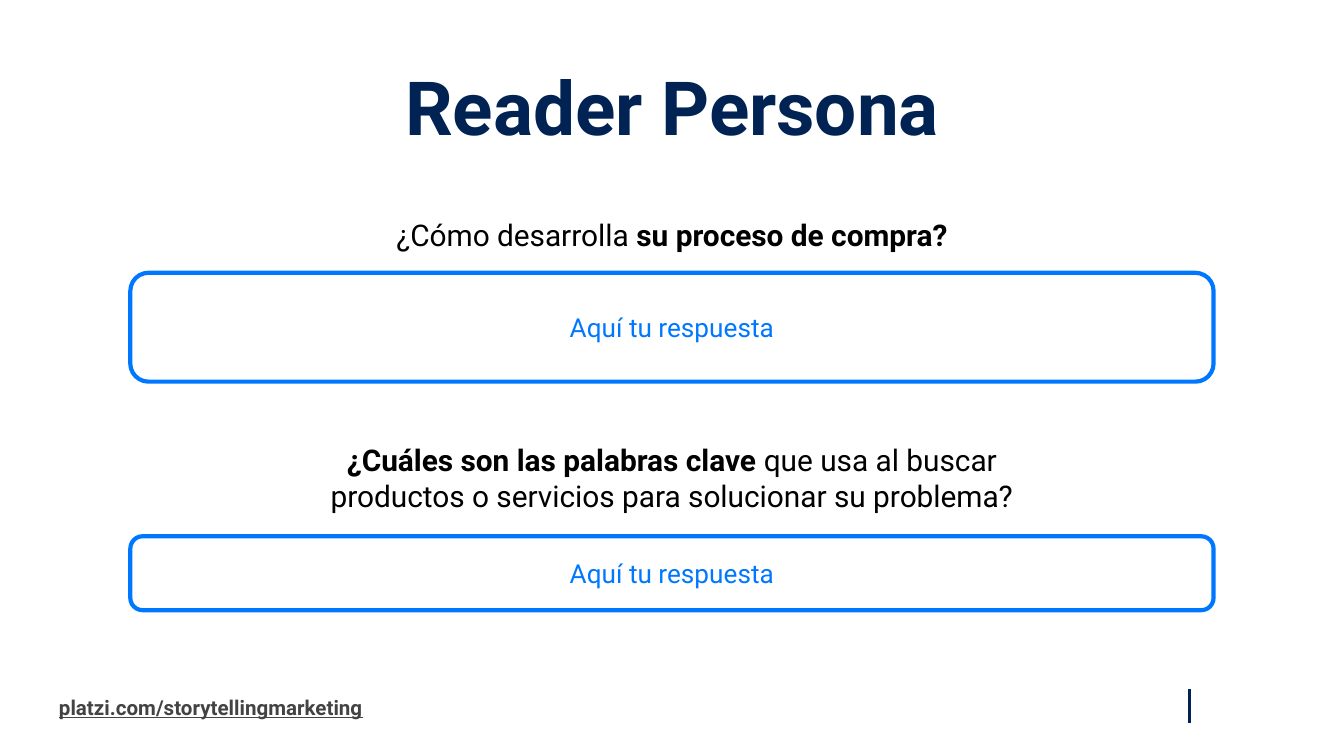
from pptx import Presentation
from pptx.dml.color import RGBColor
from pptx.enum.shapes import MSO_CONNECTOR, MSO_SHAPE
from pptx.enum.text import MSO_ANCHOR, PP_ALIGN
from pptx.oxml.ns import qn
from pptx.util import Inches, Pt
from lxml import etree

LEFT, CENTER = PP_ALIGN.LEFT, PP_ALIGN.CENTER
TOP, MIDDLE = MSO_ANCHOR.TOP, MSO_ANCHOR.MIDDLE
STRAIGHT, ROUNDED = MSO_CONNECTOR.STRAIGHT, MSO_SHAPE.ROUNDED_RECTANGLE

FONT = "Roboto"
NAVY, BLUE, GRAY, BLACK, WHITE = "012354", "0077FF", "434343", "000000", "FFFFFF"

# Content: runs are (text, bold); boxes are (left, top, width, height)
TITLE = "Reader Persona"
ANSWER = "Aquí tu respuesta"
FOOTER = "platzi.com/storytellingmarketing"
QUESTIONS = [
    {
        "runs": [("¿Cómo desarrolla", False), (" su proceso de compra?", True)],
        "box": (1.32, 1.55, 7.36, 0.39),
        "answer_top": 2.03,
        "answer_height": 0.81,
    },
    {
        "runs": [
            ("¿Cuáles son las palabras clave ", True),
            ("que usa al buscar productos o servicios para solucionar su problema?", False),
        ],
        "box": (2.02, 3.2, 5.96, 0.71),
        "answer_top": 3.99,
        "answer_height": 0.55,
    },
]

# Layout: a 16:9 slide with centred answer boxes
SLIDE_WIDTH = 10
SLIDE_HEIGHT = SLIDE_WIDTH * 9 / 16
ANSWER_WIDTH = 8.06
ANSWER_LEFT = (SLIDE_WIDTH - ANSWER_WIDTH) / 2


def color(value):
    return RGBColor.from_string(value)


def write(shape, runs, size, text_color, align=CENTER, anchor=MIDDLE):
    frame = shape.text_frame
    frame.word_wrap = True
    frame.vertical_anchor = anchor
    frame.margin_left = frame.margin_right = Inches(0.1)
    frame.margin_top = frame.margin_bottom = Inches(0.1)
    paragraph = frame.paragraphs[0]
    paragraph.alignment = align
    paragraph.font.name = FONT
    paragraph.font.size = Pt(size)
    paragraph.font.color.rgb = color(text_color)
    for text, bold in runs:
        run = paragraph.add_run()
        run.text = text
        run.font.bold = bold
    return paragraph


def add_text(slide, box, *args, **options):
    shape = slide.shapes.add_textbox(*map(Inches, box))
    return write(shape, *args, **options)


def add_answer(slide, top, height):
    box = (ANSWER_LEFT, top, ANSWER_WIDTH, height)
    shape = slide.shapes.add_shape(ROUNDED, *map(Inches, box))
    shape.shadow.inherit = False
    shape.fill.background()
    shape.line.color.rgb = color(BLUE)
    shape.line.width = Pt(2.25)
    write(shape, [(ANSWER, False)], 14, BLUE)


def main():
    presentation = Presentation()
    presentation.slide_width = Inches(SLIDE_WIDTH)
    presentation.slide_height = Inches(SLIDE_HEIGHT)
    slide = presentation.slides.add_slide(presentation.slide_layouts[6])
    slide.background.fill.solid()
    slide.background.fill.fore_color.rgb = color(WHITE)

    # Footer address and divider
    footer = add_text(slide, (0.34, 5.09, 3.11, 0.34), [(FOOTER, True)], 11, GRAY, align=LEFT)
    footer.font.underline = True
    divider = slide.shapes.add_connector(
        STRAIGHT, *map(Inches, (8.85, 5.13, 8.85, 5.38))
    )
    divider.line.color.rgb = color(NAVY)
    divider.line.width = Pt(1.5)
    etree.SubElement(divider.element.spPr, qn("a:effectLst"))

    # Title
    title = add_text(slide, (0.34, 0.48, 9.32, 0.63), [(TITLE, True)], 40, NAVY, anchor=TOP)
    title.line_spacing = 0.8

    # Questions with their answer boxes
    for question in QUESTIONS:
        add_text(slide, question["box"], question["runs"], 16, BLACK)
        add_answer(slide, question["answer_top"], question["answer_height"])

    presentation.save("out.pptx")


if __name__ == "__main__":
    main()
